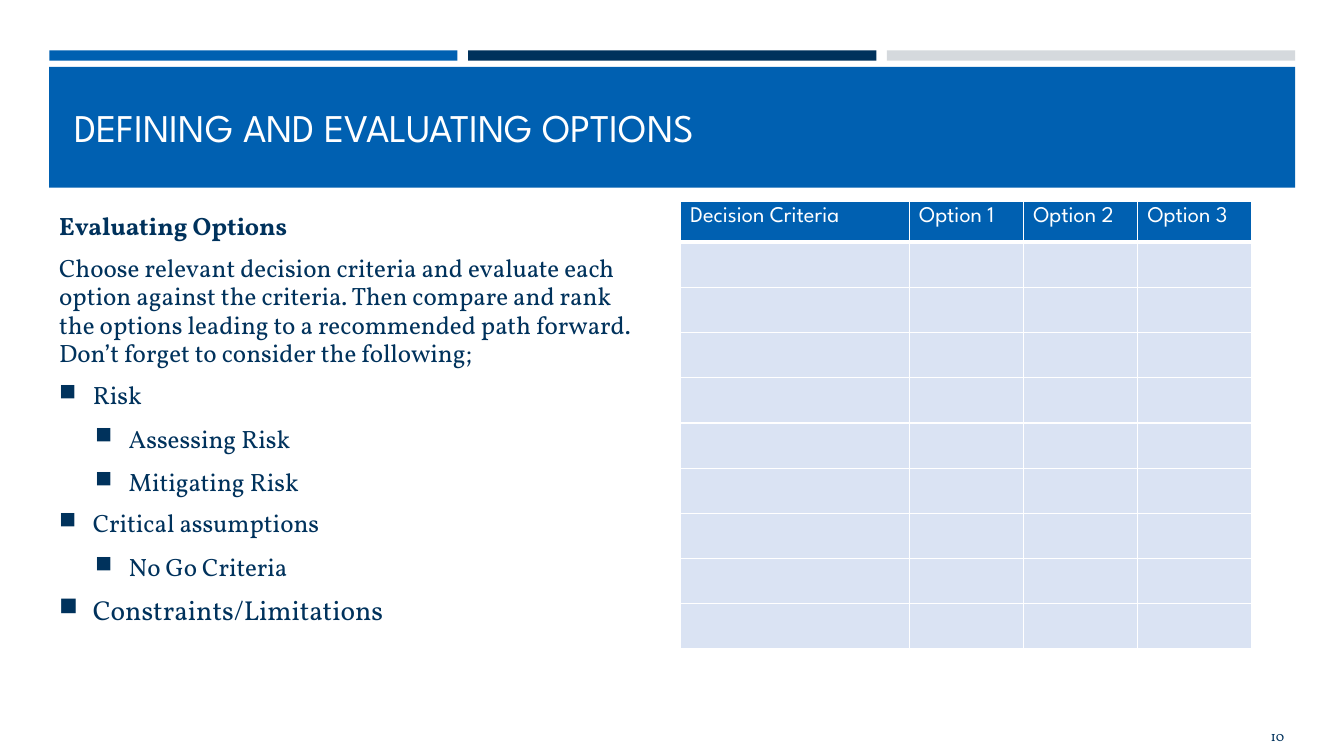
from lxml import etree
from pptx import Presentation
from pptx.dml.color import RGBColor
from pptx.enum.shapes import MSO_SHAPE
from pptx.enum.text import MSO_ANCHOR, PP_ALIGN
from pptx.oxml.ns import qn
from pptx.util import Pt

RECT = MSO_SHAPE.RECTANGLE
TOP, MIDDLE = MSO_ANCHOR.TOP, MSO_ANCHOR.MIDDLE
LEFT, RIGHT = PP_ALIGN.LEFT, PP_ALIGN.RIGHT
BLUE = RGBColor(0x00, 0x60, 0xB1)
NAVY = RGBColor(0x00, 0x32, 0x5C)
GREY = RGBColor(0xD5, 0xD9, 0xDD)
PALE = RGBColor(0xDA, 0xE3, 0xF3)
WHITE = RGBColor(0xFF, 0xFF, 0xFF)
HEAD, BODY = "League Spartan", "Vollkorn"

POINTS = [
    ("Evaluating Options", {"bold": True}),
    ("Choose relevant decision criteria and evaluate each option against the "
     "criteria. Then compare and rank the options leading to a recommended "
     "path forward. Don’t forget to consider the following;", {}),
    ("Risk", {"level": 0}),
    ("Assessing Risk", {"level": 1}),
    ("Mitigating Risk", {"level": 1}),
    ("Critical assumptions", {"level": 0}),
    ("No Go Criteria", {"level": 1}),
    ("Constraints/Limitations", {"level": 0, "size": 19.6}),
]
TITLES = ["Decision Criteria", "Option 1", "Option 2", "Option 3"]


def write(para, text, size=17.9, face=BODY, color=NAVY, bold=False, align=LEFT):
    """Put formatted text into a paragraph."""
    para.alignment = align
    run = para.add_run()
    run.text = text
    font = run.font
    font.size, font.name, font.bold = Pt(size), face, bold
    font.color.rgb = color


def frame(slide, box, anchor, top=3.6):
    """Add a wrapping text box and return its text frame."""
    text = slide.shapes.add_textbox(*map(Pt, box)).text_frame
    text.word_wrap = True
    text.vertical_anchor = anchor
    text.margin_top = Pt(top)
    return text


def bar(slide, box, color):
    """Add a plain filled rectangle."""
    shape = slide.shapes.add_shape(RECT, *map(Pt, box))
    shape.shadow.inherit = False
    shape.fill.solid()
    shape.fill.fore_color.rgb = color
    shape.line.fill.background()


def bullet(para, level):
    """Give a paragraph a square bullet and hanging indent."""
    props = para._p.get_or_add_pPr()
    props.set("marL", str(Pt(24 + 25.7 * level)))
    props.set("indent", str(Pt(-24)))
    tint = etree.SubElement(props, qn("a:buClr"))
    etree.SubElement(tint, qn("a:srgbClr"), val=str(NAVY))
    etree.SubElement(props, qn("a:buSzPct"), val="92000")
    etree.SubElement(props, qn("a:buChar"), char="■")


def border(cell, low):
    """Draw white borders on a cell, the bottom one of the given width."""
    props = cell._tc.get_or_add_tcPr()
    for spot, (side, width) in enumerate(
            [("lnL", 1), ("lnR", 1), ("lnT", 1), ("lnB", low)]):
        line = etree.Element(qn("a:" + side), w=str(Pt(width)))
        fill = etree.SubElement(line, qn("a:solidFill"))
        etree.SubElement(fill, qn("a:srgbClr"), val=str(WHITE))
        props.insert(spot, line)


def banner(slide, left, top, width, height):
    """Draw the three strips and the title band."""
    strip, gap = 291.6, 7.55
    for col, color in enumerate([BLUE, NAVY, GREY]):
        bar(slide, (left + col * (strip + gap), top, strip, 7.4), color)
    bar(slide, (left, top + 11.8, width, height - 11.8), BLUE)
    text = frame(slide, (left + 10.8, top + 21.6, width - 21.6, 77.8), TOP, 16)
    write(text.paragraphs[0], "DEFINING AND EVALUATING OPTIONS",
          size=28, face=HEAD, color=WHITE)


def advice(slide, *box):
    """Write the heading, the advice and its bulleted list."""
    text = frame(slide, box, MIDDLE)
    for row, (words, look) in enumerate(POINTS):
        para = text.add_paragraph() if row else text.paragraphs[0]
        style = dict(look)
        level = style.pop("level", None)
        para.space_before = Pt(3.6 if row else 0)
        para.space_after = Pt(6)
        para.line_spacing = 1.0 if level else 0.94
        if level is not None:
            para.level = level
            bullet(para, level)
        write(para, words, **style)


def matrix(slide, left, top, width, height):
    """Build the empty decision table under its header row."""
    rows, first, head = 10, 163.4, 29
    grid = slide.shapes.add_table(
        rows, len(TITLES), *map(Pt, (left, top, width, height))).table
    for col, column in enumerate(grid.columns):
        rest = (width - first) / (len(TITLES) - 1)
        column.width = Pt(rest if col else first)
    for row, line in enumerate(grid.rows):
        line.height = Pt((height - head) / (rows - 1) if row else head)
        for col, cell in enumerate(line.cells):
            cell.fill.solid()
            cell.fill.fore_color.rgb = PALE if row else BLUE
            border(cell, 1 if row else 3)
            if not row:
                write(cell.text_frame.paragraphs[0], TITLES[col],
                      size=16, face=HEAD, color=WHITE)


def footer(slide, *box):
    """Write the slide number."""
    text = frame(slide, box, MIDDLE)
    write(text.paragraphs[0], "10", size=10, align=RIGHT)


def main():
    """Build and save the slide."""
    deck = Presentation()
    deck.slide_width, deck.slide_height = Pt(960), Pt(540)
    slide = deck.slides.add_slide(deck.slide_layouts[6])
    banner(slide, 35.2, 36, 889.9, 98)
    advice(slide, 35.2, 146.2, 434.9, 307.4)
    matrix(slide, 486, 144, 408.2, 319.6)
    footer(slide, 841.7, 511.2, 82.8, 28.8)
    deck.save("out.pptx")


if __name__ == "__main__":
    main()
